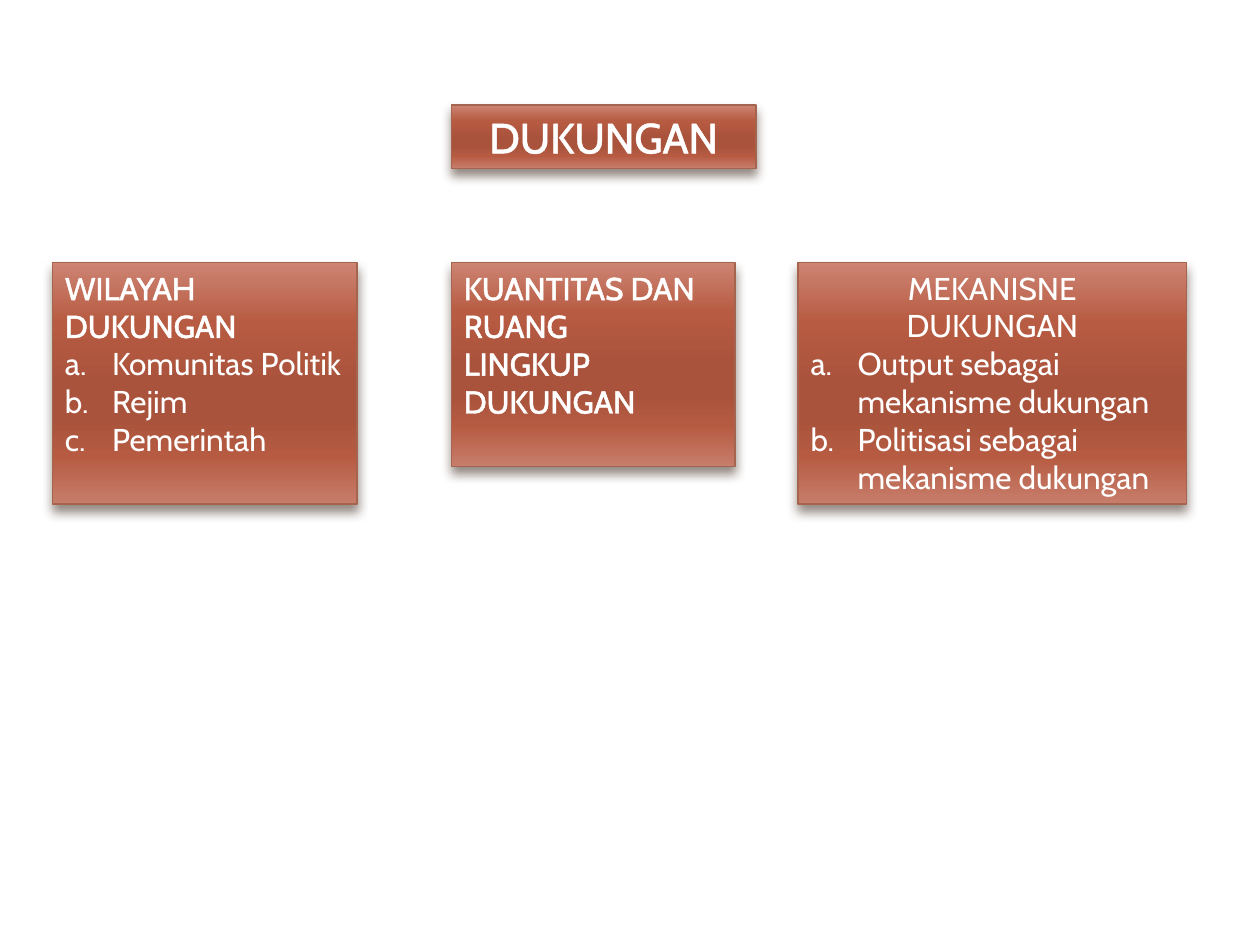
import pptx
import pptx.util
import pptx.oxml
import pptx.oxml.ns
from pptx.dml.color import RGBColor
from pptx.enum.shapes import MSO_SHAPE
from pptx.enum.text import MSO_ANCHOR, PP_ALIGN
from pptx.util import Cm

WHITE = RGBColor(0xFF, 0xFF, 0xFF)
BORDER = RGBColor(0xA5, 0x64, 0x4E)
SHADOW = RGBColor(0x4E, 0x3B, 0x30)
STOPS = [
    (0, RGBColor(0xCD, 0x84, 0x73)),
    (25, RGBColor(0xB7, 0x5B, 0x42)),
    (50, RGBColor(0xAA, 0x53, 0x3C)),
    (65, RGBColor(0xAA, 0x53, 0x3C)),
    (80, RGBColor(0xB6, 0x5B, 0x42)),
    (100, RGBColor(0xC7, 0x7D, 0x6B)),
]
NS = pptx.oxml.ns.nsdecls("a")
INDENT = Cm(0.95)

# Each paragraph: kind, text, outlined
TITLE, HEAD, CENTER, ITEM = "title", "head", "center", "item"
BOXES = [
    (9.1, 2.12, 6.14, 1.28, [(TITLE, "DUKUNGAN", True)]),
    (1.06, 5.29, 6.14, 4.87, [
        (HEAD, "WILAYAH DUKUNGAN", True),
        (ITEM, "Komunitas Politik", False),
        (ITEM, "Rejim", False),
        (ITEM, "Pemerintah", False),
    ]),
    (9.1, 5.29, 5.72, 4.11, [
        (HEAD, "KUANTITAS DAN RUANG", True),
        (HEAD, "LINGKUP DUKUNGAN", True),
    ]),
    (16.09, 5.29, 7.83, 4.87, [
        (CENTER, "MEKANISNE\vDUKUNGAN", False),
        (ITEM, "Output sebagai mekanisme dukungan", False),
        (ITEM, "Politisasi sebagai mekanisme dukungan", False),
    ]),
]


def style_box(sp):
    """Give the box its banded gradient, thin border and soft shadow below."""
    sp.line.color.rgb = BORDER
    sp.line.width = pptx.util.Pt(0.79)
    stops = "".join(
        f'<a:gs pos="{pos * 1000}"><a:srgbClr val="{color}"/></a:gs>'
        for pos, color in STOPS)
    sp.line._ln.addprevious(pptx.oxml.parse_xml(
        f'<a:gradFill {NS} rotWithShape="1"><a:gsLst>{stops}</a:gsLst>'
        '<a:lin ang="5400000" scaled="0"/></a:gradFill>'))
    sp.line._ln.addnext(pptx.oxml.parse_xml(
        f'<a:effectLst {NS}><a:outerShdw blurRad="{pptx.util.Pt(6)}" '
        f'dist="{pptx.util.Pt(4)}" dir="5400000" rotWithShape="0">'
        f'<a:srgbClr val="{SHADOW}"><a:alpha val="60000"/></a:srgbClr>'
        '</a:outerShdw></a:effectLst>'))


def add_run(p, text, size, outlined):
    r = p.add_run()
    r.text = text
    r.font.name = "Cabin"
    r.font.size = pptx.util.Pt(size)
    r.font.color.rgb = WHITE
    if outlined:
        r.font._element.insert(0, pptx.oxml.parse_xml(
            f'<a:ln {NS} w="{pptx.util.Pt(1.45)}"><a:solidFill>'
            f'<a:srgbClr val="{WHITE}"/></a:solidFill></a:ln>'))


prs = pptx.Presentation()
prs.slide_width, prs.slide_height = Cm(25.4), Cm(19.05)
s = prs.slides.add_slide(prs.slide_layouts[6])

for left, top, width, height, paragraphs in BOXES:
    sp = s.shapes.add_shape(
        MSO_SHAPE.RECTANGLE, Cm(left), Cm(top), Cm(width), Cm(height))
    style_box(sp)
    tf = sp.text_frame
    tf.word_wrap = True
    tf.vertical_anchor = MSO_ANCHOR.TOP
    for i, (kind, text, outlined) in enumerate(paragraphs):
        p = tf.add_paragraph() if i else tf.paragraphs[0]
        p.alignment = PP_ALIGN.CENTER if kind in (TITLE, CENTER) else PP_ALIGN.LEFT
        if kind == ITEM:
            pPr = p._p.get_or_add_pPr()
            pPr.set("marL", str(INDENT))
            pPr.set("indent", str(-INDENT))
            pPr.append(pptx.oxml.parse_xml(
                f'<a:buAutoNum {NS} type="alphaLcPeriod"/>'))
        for n, line in enumerate(text.split("\v")):
            if n:
                p.add_line_break()
            add_run(p, line, 24 if kind == TITLE else 18, outlined)

prs.save("out.pptx")
